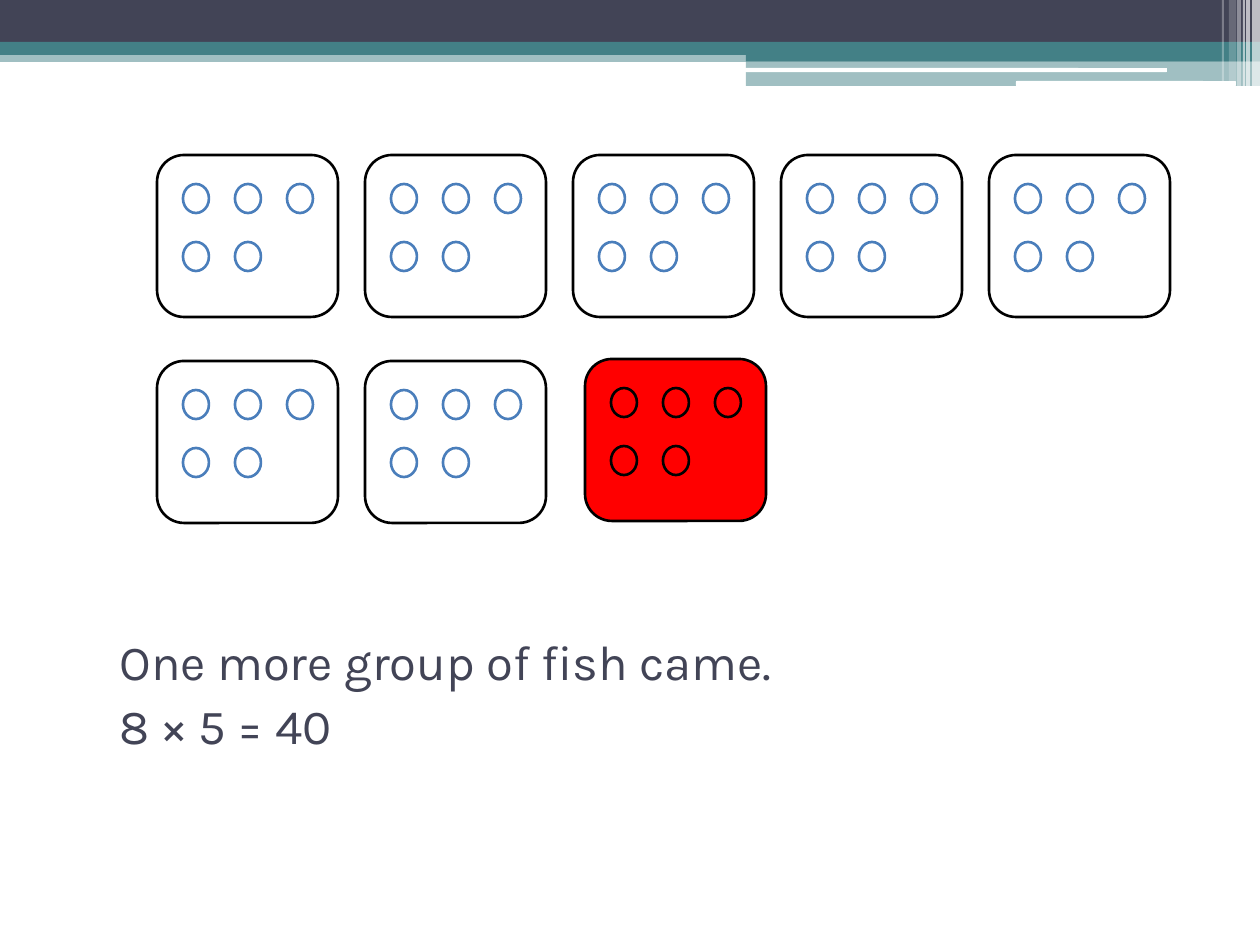
from dataclasses import dataclass

from lxml import etree
from pptx import Presentation
from pptx import util as u
from pptx.dml.color import RGBColor
from pptx.enum import shapes, text
from pptx.oxml.ns import qn

PX_PER_INCH = 126


@dataclass(frozen=True)
class Theme:
    navy: str = "424456"
    teal: str = "438086"
    white: str = "FFFFFF"
    black: str = "000000"
    blue: str = "4A7EBB"
    red: str = "FF0000"
    font: str = "Karla"
    body_size: int = 28
    space_before: int = 3
    outline: float = 1.5


THEME = Theme()
KIND = shapes.MSO_SHAPE


def px(length):
    return u.Emu(round(length * 914400 / PX_PER_INCH))


def add_figure(parent, kind, box, fill=None, line=None, opacity=100):
    figure = parent.add_shape(kind, *map(px, box))
    figure.shadow.inherit = False
    if fill:
        figure.fill.solid()
        figure.fill.fore_color.rgb = RGBColor.from_string(fill)
        if opacity < 100:
            color = figure.fill._xPr.find(".//" + qn("a:srgbClr"))
            etree.SubElement(color, qn("a:alpha"), val=str(opacity * 1000))
    else:
        figure.fill.background()
    if line:
        figure.line.color.rgb = RGBColor.from_string(line)
        figure.line.width = u.Pt(THEME.outline)
    else:
        figure.line.fill.background()
    return figure


def add_header(page, box):
    left, top, width, height = box
    right = left + width
    panel = left + 746
    bands = [
        (left, 50, width, 12, THEME.teal, 50),
        (left, 0, width, 42, THEME.navy, 100),
        (left, 42, width, 13, THEME.teal, 100),
        (panel, 49, right - panel, 12, THEME.teal, 100),
        (panel, 61, right - panel, 25, THEME.teal, 50),
    ]
    for x, y, band_width, band_height, color, opacity in bands:
        add_figure(page.shapes, KIND.RECTANGLE,
                   (x, top + y, band_width, band_height), color, opacity=opacity)

    for x, y, rule_width, rule_height in [(745, 68, 422, 4), (1016, 81, 220, 5)]:
        add_figure(page.shapes, KIND.ROUNDED_RECTANGLE,
                   (left + x, top + y, rule_width, rule_height), THEME.white)

    stripes = [(8, 8, height, 65), (14, 4, height, 65), (17, 2, height, 60),
               (23, 4, height, 40), (31, 7, height - 5, 20), (38, 2, height - 5, 30)]
    for from_right, stripe_width, stripe_height, opacity in stripes:
        add_figure(page.shapes, KIND.RECTANGLE,
                   (right - from_right, top, stripe_width, stripe_height),
                   THEME.white, opacity=opacity)


def add_fish_group(page, box, card_line, fish_line, fill=None):
    left, top, width, height = box
    group = page.shapes.add_group_shape()
    add_figure(group.shapes, KIND.ROUNDED_RECTANGLE, box, fill, card_line)
    for fish in range(5):
        row, column = divmod(fish, 3)
        add_figure(group.shapes, KIND.OVAL,
                   (left + 26 + 52 * column, top + 29 + 58 * row, 26, 29),
                   fill, fish_line)


def add_fish_grid(page, box):
    left, top, width, height = box
    gap_x, gap_y = 27, 44
    card_width = (width - 4 * gap_x) // 5
    card_height = (height - gap_y) // 2
    for index in range(7):
        row, column = divmod(index, 5)
        card = (left + column * (card_width + gap_x),
                top + row * (card_height + gap_y), card_width, card_height)
        add_fish_group(page, card, THEME.black, THEME.blue)
    newcomer = (left + 428, top + 204, card_width, card_height)
    add_fish_group(page, newcomer, THEME.black, THEME.black, THEME.red)


def fill_body(body, box, lines):
    body.left, body.top, body.width, body.height = map(px, box)
    frame = body.text_frame
    frame.word_wrap = True
    frame.auto_size = text.MSO_AUTO_SIZE.NONE
    frame.vertical_anchor = text.MSO_ANCHOR.TOP
    frame.margin_top = px(70)
    frame.text = "\n".join(lines)
    for para in frame.paragraphs:
        para.space_before = u.Pt(THEME.space_before)
        para.font.name = THEME.font
        para.font.size = u.Pt(THEME.body_size)
        para.font.color.rgb = RGBColor.from_string(THEME.navy)
        properties = para._p.get_or_add_pPr()
        properties.set("marL", str(px(6)))
        properties.set("indent", "0")
        bullet = etree.Element(qn("a:buNone"))
        properties.find(qn("a:defRPr")).addprevious(bullet)


def main():
    deck = Presentation()
    deck.slide_width, deck.slide_height = px(1260), px(945)
    page = deck.slides.add_slide(deck.slide_layouts[1])
    title = page.shapes.title
    title.element.getparent().remove(title.element)

    add_header(page, (0, 0, 1260, 86))
    fill_body(page.placeholders[1], (101, 561, 1071, 200),
              ["One more group of fish came.", "8 × 5 = 40"])
    add_fish_grid(page, (157, 155, 1013, 368))
    deck.save("out.pptx")


if __name__ == "__main__":
    main()
